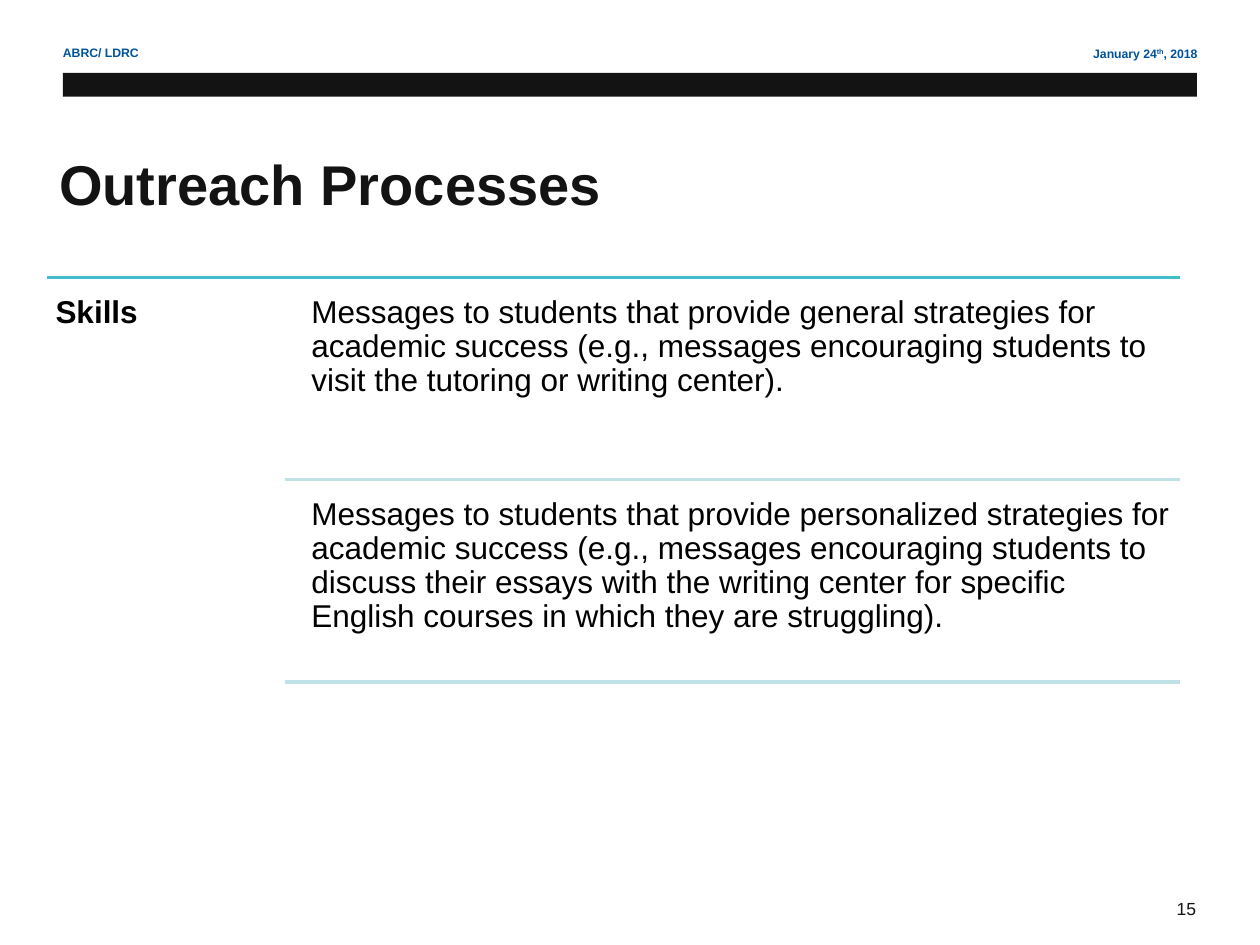
from dataclasses import dataclass

from lxml.etree import SubElement
from pptx import Presentation
from pptx.dml.color import RGBColor as RGB
from pptx.enum.shapes import MSO_CONNECTOR as LINE, MSO_SHAPE as SHAPE
from pptx.enum.text import MSO_ANCHOR as ANCHOR, MSO_AUTO_SIZE as FIT, PP_ALIGN as ALIGN
from pptx.oxml.ns import qn
from pptx.util import Cm, Pt


@dataclass(frozen=True)
class Theme:
    face: str = "Arial"
    ink: RGB = RGB(0x14, 0x13, 0x13)
    black: RGB = RGB(0, 0, 0)
    blue: RGB = RGB(0x00, 0x53, 0x9B)
    teal: RGB = RGB(0x42, 0xBE, 0xCA)
    pale: RGB = RGB(0xC0, 0xE2, 0xE6)
    title: int = 32
    body: int = 18
    page: int = 10
    head: int = 7


theme = Theme()


def style(para, size, color, bold=False):
    font = para.font
    font.name, font.size, font.bold = theme.face, Pt(size), bold
    font.color.rgb = color


def write(text, box, size, color, bold=False, pad=None):
    """Add a text box; box is left, top, width, height and pad left, top, right, bottom, in cm."""
    frame = slide.shapes.add_textbox(*map(Cm, box)).text_frame
    frame.word_wrap = True
    if pad:
        (frame.margin_left, frame.margin_top,
         frame.margin_right, frame.margin_bottom) = map(Cm, pad)
    para = frame.paragraphs[0]
    para.text = text
    style(para, size, color, bold)
    return para


deck = Presentation()
deck.slide_width, deck.slide_height = Cm(25.4), Cm(19.05)
slide = deck.slides.add_slide(deck.slide_layouts[5])

# Page header and number
date = write("January 24", (16.31, 0.81, 8.08, 0.56), theme.head, theme.blue, True)
date.alignment = ALIGN.RIGHT
suffix = date.add_run()
suffix.text = "th"
suffix.font._element.set("baseline", "30000")
date.add_run().text = ", 2018"
write("ABRC/ LDRC", (1.02, 0.79, 9.04, 0.56), theme.head, theme.blue, True)
write("15", (23.47, 17.98, 1.17, 0.69), theme.page, theme.ink)

bar = slide.shapes.add_shape(SHAPE.RECTANGLE, Cm(1.27), Cm(1.47), Cm(22.86), Cm(0.48))
bar.shadow.inherit = False
bar.fill.solid()
bar.fill.fore_color.rgb = theme.ink
bar.line.fill.background()

# Title
title = slide.shapes.title
title.left, title.top, title.width, title.height = Cm(0.94), Cm(2.11), Cm(22.86), Cm(3.18)
frame = title.text_frame
frame.text = "Outreach Processes"
frame.auto_size = FIT.NONE
frame.vertical_anchor = ANCHOR.MIDDLE
para = frame.paragraphs[0]
para.alignment = ALIGN.LEFT
style(para, theme.title, theme.ink, True)

# Skill and its outreach messages
top, step, right, inset = 5.59, 4.08, 23.79, 0.18
skill = write("Skills", (0.94, top, 4.83, 12.42), theme.body, theme.black, True,
              (inset, 0.38, inset, inset))
skill.line_spacing = 0.9

notes = [
    "Messages to students that provide general strategies for academic success "
    "(e.g., messages encouraging students to visit the tutoring or writing center).",
    "Messages to students that provide personalized strategies for academic success "
    "(e.g., messages encouraging students to discuss their essays with the writing "
    "center for specific English courses in which they are struggling).",
]
rules = [(0.94, top, theme.teal)]
for row, note in enumerate(notes):
    para = write(note, (6.1, top + row * step + 0.2, 17.7, 3.88), theme.body,
                 theme.black, pad=(inset,) * 4)
    para.line_spacing = 0.9
    rules.append((5.74, top + (row + 1) * step, theme.pale))

for left, y, color in rules:
    rule = slide.shapes.add_connector(LINE.STRAIGHT, Cm(left), Cm(y), Cm(right), Cm(y))
    rule.line.color.rgb = color
    rule.line.width = Pt(2)
    SubElement(rule._element.spPr, qn("a:effectLst"))

deck.save("out.pptx")
